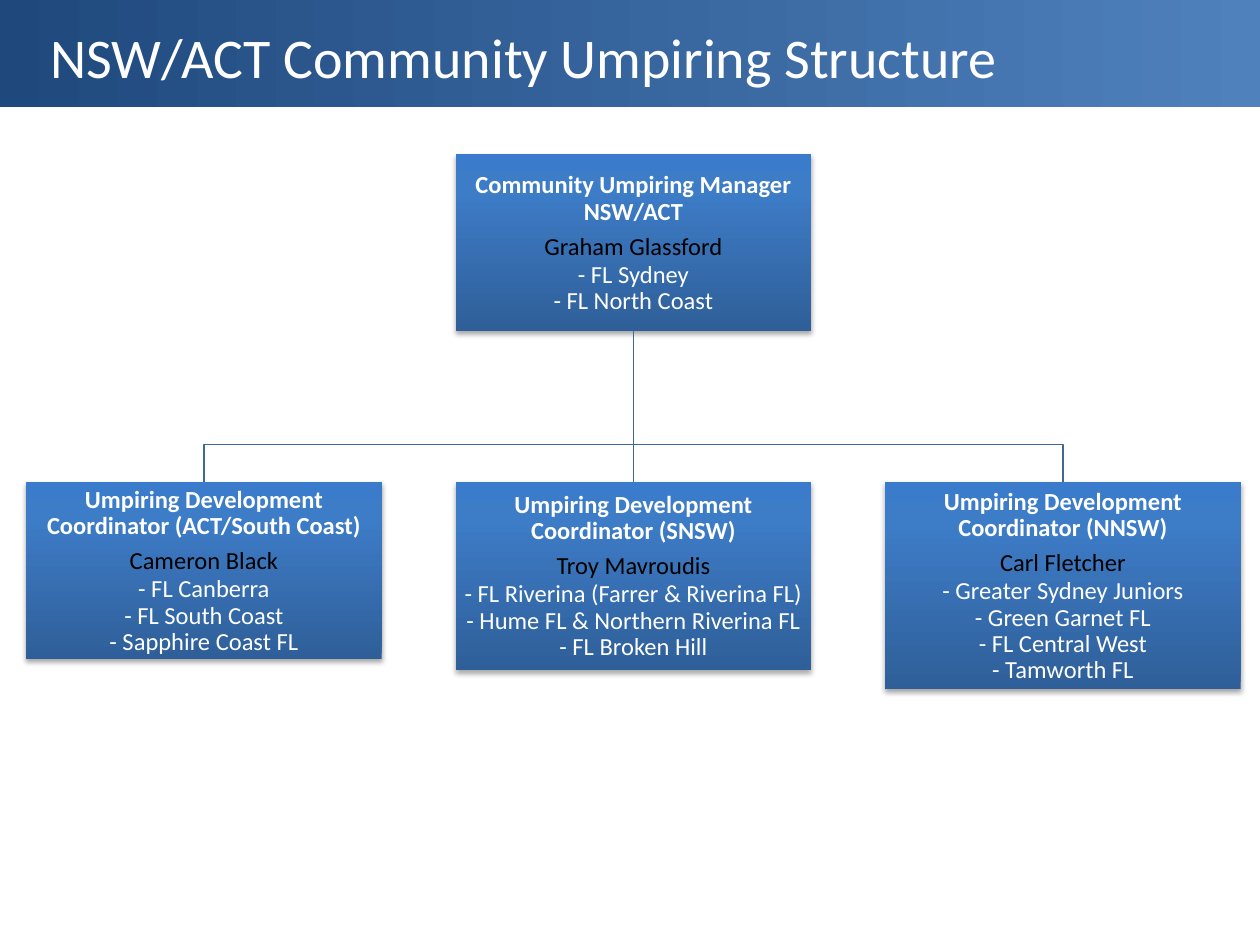
from copy import deepcopy
from dataclasses import dataclass

from lxml import etree
from pptx import Presentation
from pptx.dml.color import RGBColor
from pptx.enum import shapes, text
from pptx.oxml import ns
from pptx.util import Pt

FONT = "Calibri"
WHITE, BLACK, LINE = "FFFFFF", "000000", "3F6797"
BAND = [(0, "1F497D"), (1, "4F81BD")]
BOX = [(0, "2F5F99"), (0.8, "3D7CC7"), (1, "3A7CCB")]
WIDTH, HEIGHT = 720, 540
BOX_W, LEFT, PITCH = 203.2, 15, 245.4
TOP, LOW, BEND = 87.9, 275.2, 253.9


@dataclass
class Post:
    role: str
    name: str
    areas: list[str]
    col: int
    top: float
    high: float


BOSS = Post("Community Umpiring Manager NSW/ACT", "Graham Glassford",
            ["FL Sydney", "FL North Coast"], 1, TOP, 101.5)
TEAM = [
    Post("Umpiring Development Coordinator (ACT/South Coast)", "Cameron Black",
         ["FL Canberra", "FL South Coast", "Sapphire Coast FL"],
         0, LOW, 101.5),
    Post("Umpiring Development Coordinator (SNSW)", "Troy Mavroudis",
         ["FL Riverina (Farrer & Riverina FL)",
          "Hume FL & Northern Riverina FL", "FL Broken Hill"],
         1, LOW, 107.5),
    Post("Umpiring Development Coordinator (NNSW)", "Carl Fletcher",
         ["Greater Sydney Juniors", "Green Garnet FL", "FL Central West",
          "Tamworth FL"], 2, LOW, 118.8),
]


def color(code: str) -> RGBColor:
    return RGBColor.from_string(code)


def style(part, size: float, code: str, bold: bool = False) -> None:
    """Set the font of every run in a paragraph."""
    for run in part.runs:
        font = run.font
        font.name, font.size, font.bold = FONT, Pt(size), bold
        font.color.rgb = color(code)


def set_frame(frame, inset: float, anchor) -> None:
    frame.word_wrap = True
    frame.vertical_anchor = anchor
    frame.margin_left = frame.margin_right = Pt(inset)
    frame.margin_top = frame.margin_bottom = Pt(inset)


def shade(shape, stops: list[tuple[float, str]], angle: float) -> None:
    """Fill a shape with a gradient of two or more stops."""
    fill = shape.fill
    fill.gradient()
    fill.gradient_angle = angle
    items = shape._element.spPr.find(".//" + ns.qn("a:gsLst"))
    while len(items) < len(stops):
        items.append(deepcopy(items[-1]))
    for stop, (place, code) in zip(fill.gradient_stops, stops):
        stop.position = place
        stop.color.rgb = color(code)


def add_rect(slide, x: float, y: float, w: float, h: float):
    rect = slide.shapes.add_shape(shapes.MSO_SHAPE.RECTANGLE,
                                  Pt(x), Pt(y), Pt(w), Pt(h))
    rect.shadow.inherit = False
    rect.line.fill.background()
    return rect


def add_shadow(shape) -> None:
    """Give a shape a soft shadow below it."""
    effects = shape._element.spPr.find(ns.qn("a:effectLst"))
    outer = etree.SubElement(effects, ns.qn("a:outerShdw"),
                             blurRad=str(Pt(3.1)), dist=str(Pt(1.8)),
                             dir="5400000", rotWithShape="0")
    tint = etree.SubElement(outer, ns.qn("a:srgbClr"), val=BLACK)
    etree.SubElement(tint, ns.qn("a:alpha"), val="35000")


def add_post(slide, post: Post):
    box = add_rect(slide, LEFT + post.col * PITCH, post.top, BOX_W, post.high)
    shade(box, BOX, 90)
    add_shadow(box)
    frame = box.text_frame
    set_frame(frame, 0.7, text.MSO_ANCHOR.MIDDLE)
    areas = [f"- {area}" for area in post.areas]
    frame.text = "\n".join([post.role, post.name, *areas])
    for i, part in enumerate(frame.paragraphs):
        part.alignment = text.PP_ALIGN.CENTER
        part.line_spacing = 0.9 if i < 2 else 0.6
        part.space_after = Pt(4.9)
        style(part, 14, BLACK if i == 1 else WHITE, bold=i == 0)
    return box


def set_line(shape) -> None:
    shape.line.color.rgb = color(LINE)
    shape.line.width = Pt(0.75)


def add_branch(slide, boss, box) -> None:
    """Draw the bent line from the boss to a box at either side."""
    start = boss.left + boss.width // 2
    end = box.left + box.width // 2
    base = boss.top + boss.height
    form = slide.shapes.build_freeform(start, base)
    form.add_line_segments([(start, Pt(BEND)), (end, Pt(BEND)),
                            (end, box.top)], close=False)
    branch = form.convert_to_shape()
    branch.shadow.inherit = False
    branch.fill.background()
    set_line(branch)


def add_stem(slide, boss, box) -> None:
    stem = slide.shapes.add_connector(shapes.MSO_CONNECTOR.STRAIGHT, 0, 0, 0, 0)
    stem.begin_connect(boss, 2)
    stem.end_connect(box, 0)
    set_line(stem)
    etree.SubElement(stem._element.spPr, ns.qn("a:effectLst"))


def add_title(slide) -> None:
    band = add_rect(slide, 0, 0, WIDTH, 61.2)
    shade(band, BAND, 0)
    title = slide.shapes.add_textbox(Pt(28.8), Pt(9.6), Pt(663), Pt(41.8))
    frame = title.text_frame
    set_frame(frame, 0, text.MSO_ANCHOR.BOTTOM)
    frame.text = "NSW/ACT Community Umpiring Structure"
    style(frame.paragraphs[0], 32, WHITE)


def main() -> None:
    deck = Presentation()
    deck.slide_width, deck.slide_height = Pt(WIDTH), Pt(HEIGHT)
    slide = deck.slides.add_slide(deck.slide_layouts[6])
    add_title(slide)
    boss = add_post(slide, BOSS)
    for post in TEAM:
        box = add_post(slide, post)
        join = add_stem if post.col == BOSS.col else add_branch
        join(slide, boss, box)
    deck.save("out.pptx")


if __name__ == "__main__":
    main()
